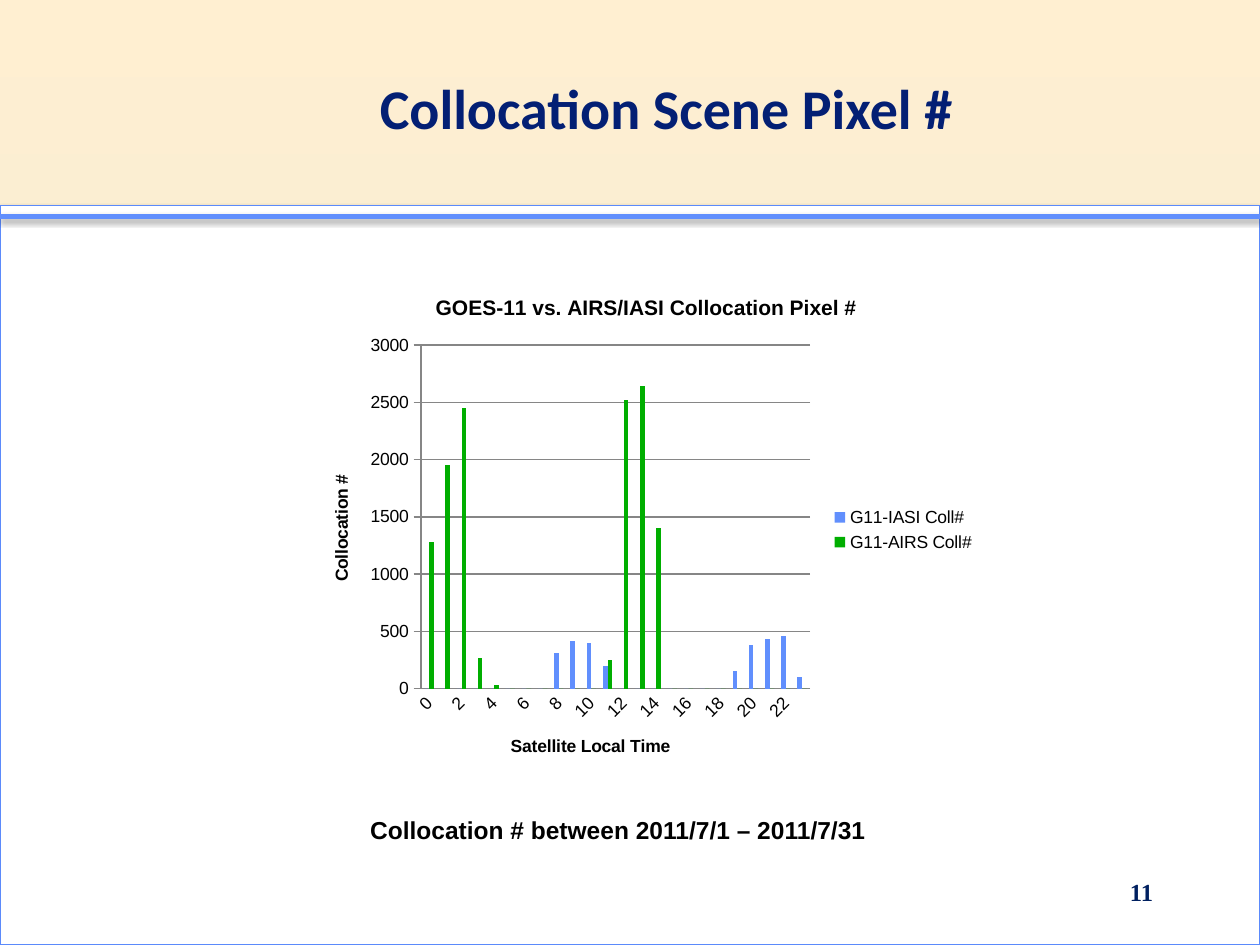
from lxml import etree
from pptx import Presentation
from pptx.chart.data import CategoryChartData
from pptx.dml.color import RGBColor
from pptx.enum.chart import XL_CHART_TYPE, XL_LEGEND_POSITION, XL_TICK_MARK
from pptx.enum.shapes import MSO_CONNECTOR, MSO_SHAPE
from pptx.enum.text import MSO_ANCHOR, PP_ALIGN
from pptx.oxml import parse_xml
from pptx.oxml.ns import nsdecls, qn
from pptx.util import Inches, Pt

COLUMNS = XL_CHART_TYPE.COLUMN_CLUSTERED
LEGEND_RIGHT = XL_LEGEND_POSITION.RIGHT
TICK_NONE, TICK_CROSS = XL_TICK_MARK.NONE, XL_TICK_MARK.CROSS
STRAIGHT, RECTANGLE = MSO_CONNECTOR.STRAIGHT, MSO_SHAPE.RECTANGLE
TOP, MIDDLE, BOTTOM = MSO_ANCHOR.TOP, MSO_ANCHOR.MIDDLE, MSO_ANCHOR.BOTTOM
CENTER, RIGHT = PP_ALIGN.CENTER, PP_ALIGN.RIGHT

THEME = {
    "sky": [(0, "FFEFD1"), (65, "F0EBD5"), (100, "D1C39F")],
    "panel": "FFFFFF", "panel_edge": "5B8AFB", "rule": "618FFD",
    "title": "031F74", "number": "002060", "ink": "000000", "grid": "868686",
    "iasi": "618FFD", "airs": "00AE00",
    "title_size": 32, "note_size": 14, "chart_title_size": 12, "chart_size": 10,
}


def style_font(font, face, size, color, bold=True):
    values = {"name": face, "size": Pt(THEME[size]), "bold": bold}
    for attribute, value in values.items():
        setattr(font, attribute, value)
    font.color.rgb = RGBColor.from_string(THEME[color])


def add_shadow(shape, opacity, distance):
    shape._element.spPr.append(parse_xml(
        f'<a:effectLst {nsdecls("a")}><a:outerShdw blurRad="{Pt(3.1)}" dist="{Pt(distance)}" '
        f'dir="5400000" rotWithShape="0"><a:srgbClr val="{THEME["ink"]}">'
        f'<a:alpha val="{opacity * 1000}"/></a:srgbClr></a:outerShdw></a:effectLst>'))


prs = Presentation()
prs.slide_width, prs.slide_height = Inches(10), Inches(7.5)
slide = prs.slides.add_slide(prs.slide_layouts[5])

sky = slide.background.fill
sky.gradient()
sky.gradient_angle = 270
stops = slide.background._cSld.find(".//" + qn("a:gsLst"))
for stop in list(stops):
    stops.remove(stop)
for position, color in THEME["sky"]:
    stop = etree.SubElement(stops, qn("a:gs"), pos=str(position * 1000))
    etree.SubElement(stop, qn("a:srgbClr"), val=color)

panel = slide.shapes.add_shape(RECTANGLE, 0, Inches(1.63), Inches(10), Inches(5.87))
panel.fill.solid()
panel.fill.fore_color.rgb = RGBColor.from_string(THEME["panel"])
rule = slide.shapes.add_connector(STRAIGHT, 0, Inches(1.72), Inches(10), Inches(1.72))
for shape, color, width, opacity, distance in [
    (panel, "panel_edge", 0.75, 35, 1.8),
    (rule, "rule", 2.8, 38, 1.6),
]:
    shape.line.color.rgb = RGBColor.from_string(THEME[color])
    shape.line.width = Pt(width)
    add_shadow(shape, opacity, distance)

title = slide.shapes.title
number = slide.shapes.add_textbox(0, 0, 0, 0)
period = slide.shapes.add_textbox(0, 0, 0, 0)
for holder, box, text, anchor, align, face, size, color in [
    (title, (1.83, 0.42, 6.92, 0.75), "Collocation Scene Pixel #",
     BOTTOM, CENTER, "Calibri", "title_size", "title"),
    (number, (7.17, 6.83, 2.08, 0.5), "11",
     MIDDLE, RIGHT, "Times New Roman", "note_size", "number"),
    (period, (2.83, 6.42, 4.15, 0.34), "Collocation # between 2011/7/1 – 2011/7/31",
     TOP, CENTER, "Arial", "note_size", "ink"),
]:
    for side, value in zip(("left", "top", "width", "height"), box):
        setattr(holder, side, Inches(value))
    frame = holder.text_frame
    frame.text = text
    frame.word_wrap = holder is not period
    frame.vertical_anchor = anchor
    frame.paragraphs[0].alignment = align
    style_font(frame.paragraphs[0].runs[0].font, face, size, color)
title.text_frame.paragraphs[0].line_spacing = 0.85

collocations = CategoryChartData()
collocations.categories = [str(hour) for hour in range(24)]
collocations.add_series("G11-IASI Coll#", [0] * 8 + [310, 420, 400, 200] + [0] * 7
                        + [150, 380, 430, 460, 100])
collocations.add_series("G11-AIRS Coll#", [1280, 1950, 2450, 270, 30] + [0] * 6
                        + [250, 2520, 2640, 1400] + [0] * 9)
chart = slide.shapes.add_chart(COLUMNS, Inches(2.42), Inches(2.17),
                               Inches(5.42), Inches(4.07), collocations).chart
style_font(chart.font, "Arial", "chart_size", "ink", False)
chart.has_legend = True
chart.legend.position = LEGEND_RIGHT
chart.legend.include_in_layout = False

hours, counts = chart.category_axis, chart.value_axis
for part, text, size in [
    (chart, "GOES-11 vs. AIRS/IASI Collocation Pixel #", "chart_title_size"),
    (hours, "Satellite Local Time", "chart_size"),
    (counts, "Collocation #", "chart_size"),
]:
    heading = part.chart_title if part is chart else part.axis_title
    heading.text_frame.text = text
    style_font(heading.text_frame.paragraphs[0].runs[0].font, "Arial", size, "ink")

for axis, settings in [
    (hours, {"major_tick_mark": TICK_NONE, "has_major_gridlines": False}),
    (counts, {"major_tick_mark": TICK_CROSS, "has_major_gridlines": True,
              "minimum_scale": 0, "maximum_scale": 3000, "major_unit": 500}),
]:
    for attribute, value in settings.items():
        setattr(axis, attribute, value)
    axis.format.line.color.rgb = RGBColor.from_string(THEME["grid"])
counts.major_gridlines.format.line.color.rgb = RGBColor.from_string(THEME["grid"])

style_font(hours.tick_labels.font, "Arial", "chart_size", "ink", False)
hours._element.find(qn("c:txPr")).find(qn("a:bodyPr")).set("rot", "-2700000")
hours._element.find(qn("c:noMultiLvlLbl")).addprevious(
    parse_xml(f'<c:tickLblSkip {nsdecls("c")} val="2"/>'))

plot = chart.plots[0]
plot.gap_width, plot.overlap, plot.vary_by_categories = 150, 0, False
for series, color in zip(plot.series, ("iasi", "airs")):
    series.format.fill.solid()
    series.format.fill.fore_color.rgb = RGBColor.from_string(THEME[color])

plot_area = chart._chartSpace.find(".//" + qn("c:plotArea"))
for old in plot_area.findall(qn("c:layout")):
    plot_area.remove(old)
layout = etree.Element(qn("c:layout"))
manual = etree.SubElement(layout, qn("c:manualLayout"))
for tag, value in [("layoutTarget", "inner"), ("xMode", "edge"), ("yMode", "edge"),
                   ("x", "0.17"), ("y", "0.14"), ("w", "0.57"), ("h", "0.67")]:
    etree.SubElement(manual, qn("c:" + tag), val=value)
plot_area.insert(0, layout)

prs.save("out.pptx")
